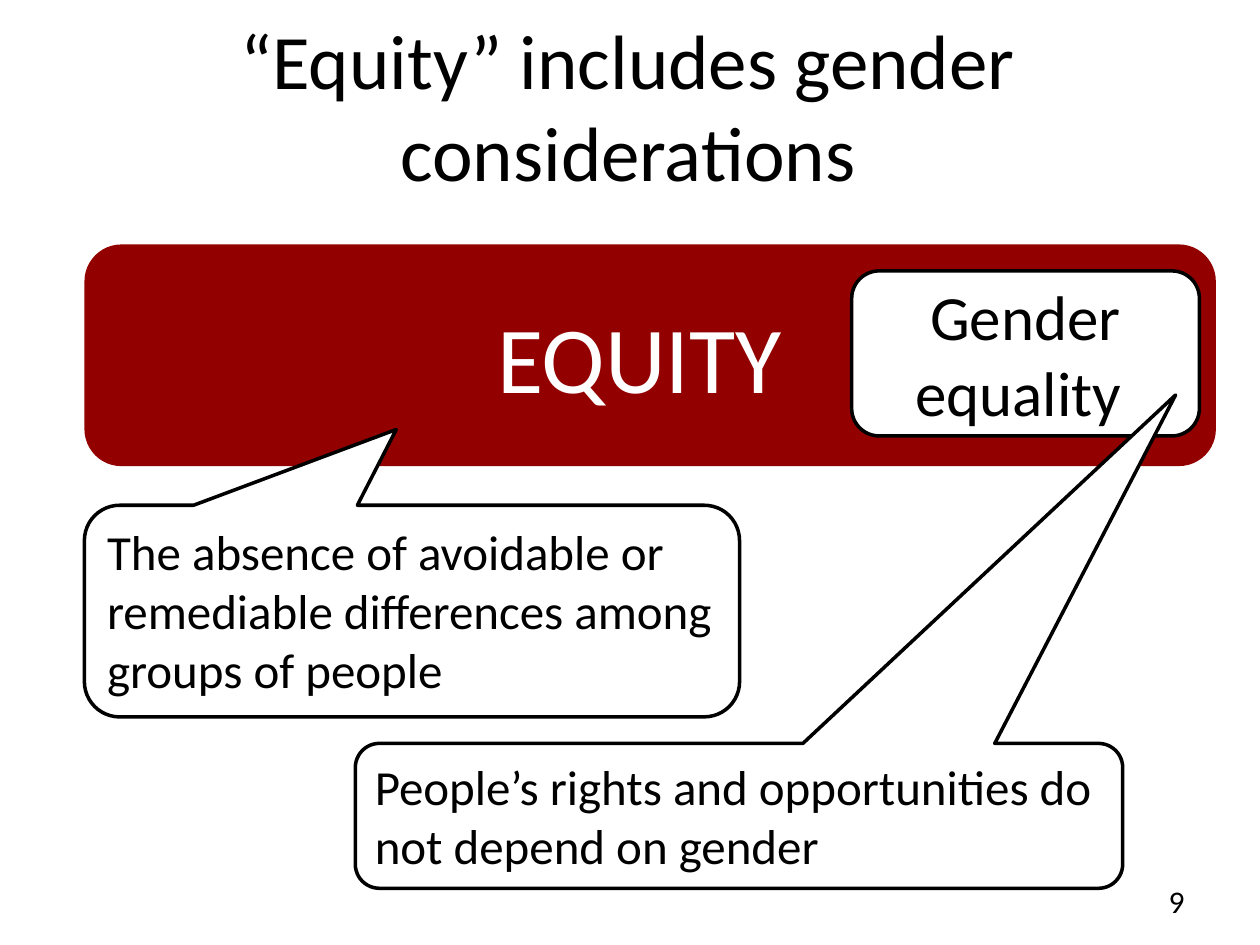
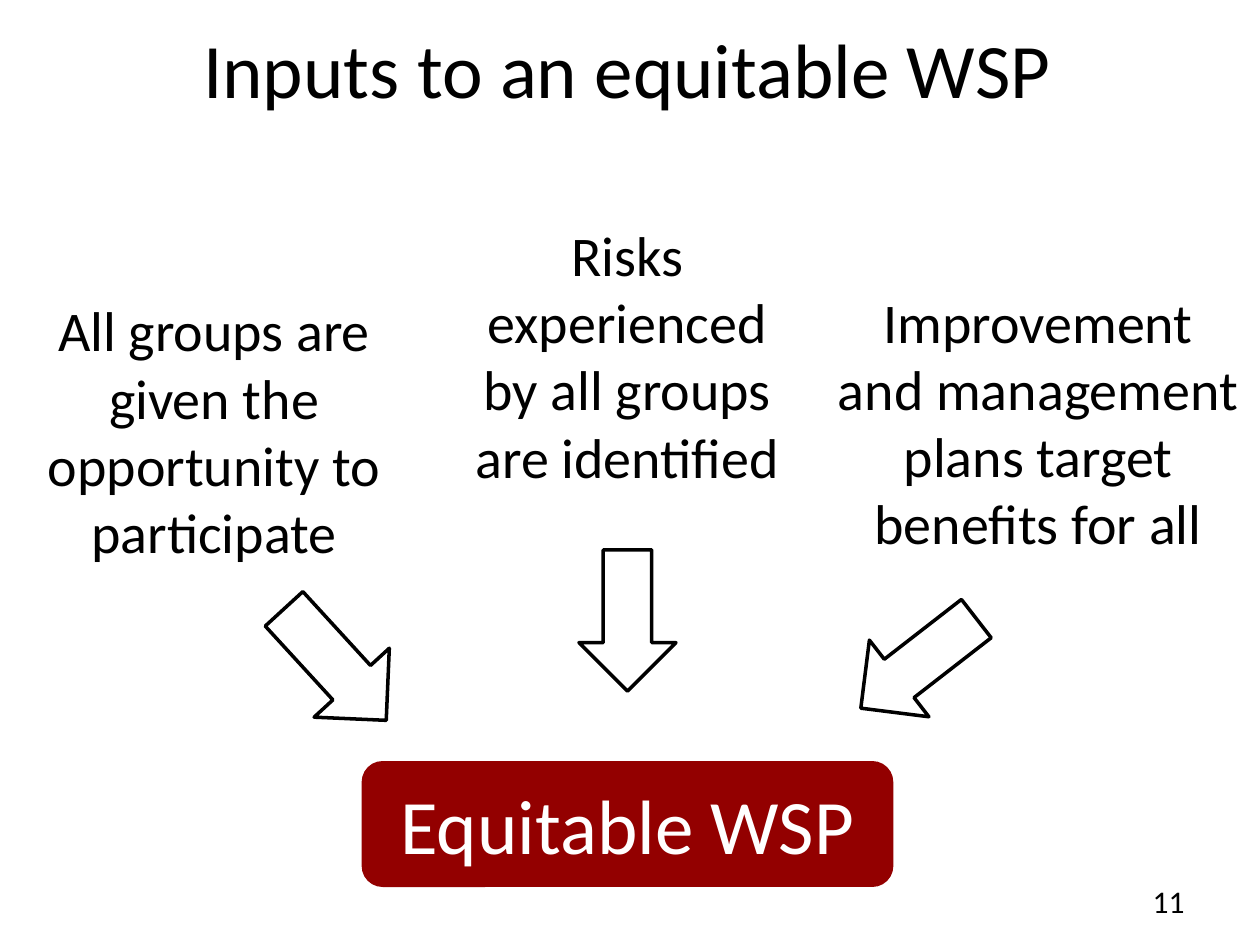
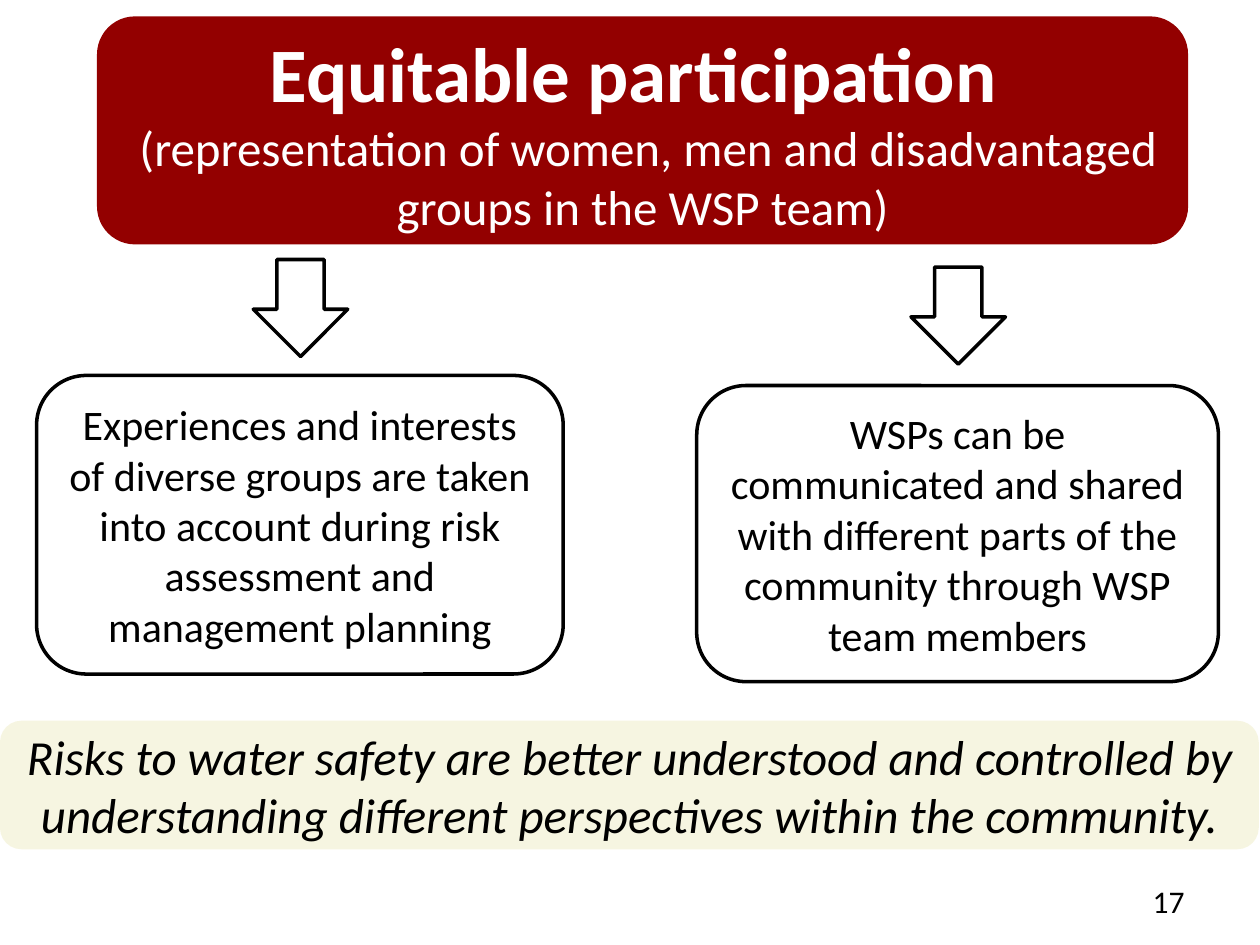
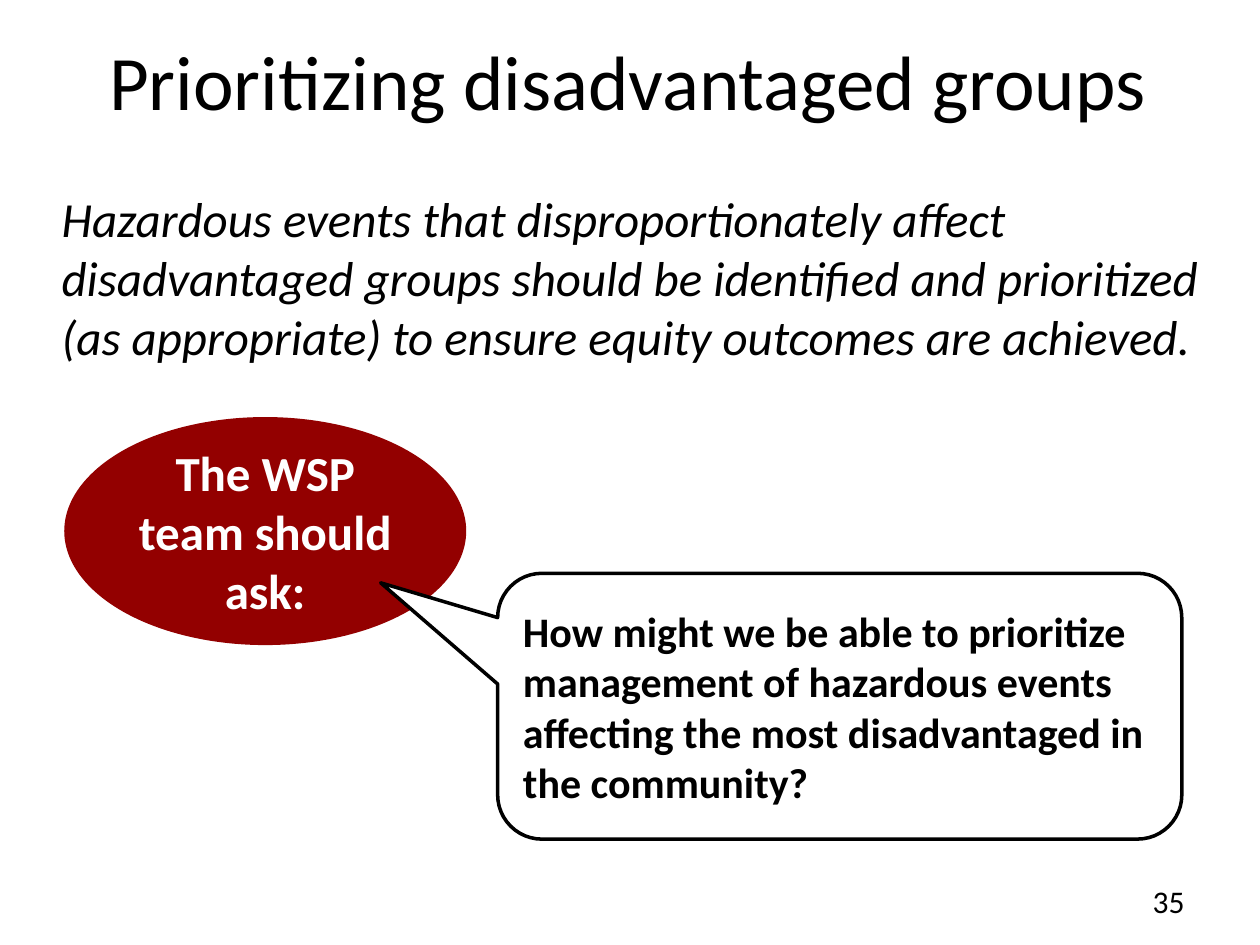
from lxml import etree
from pptx import Presentation
from pptx.dml.color import RGBColor
from pptx.enum.shapes import MSO_SHAPE as SHAPE
from pptx.enum.text import MSO_ANCHOR as ANCHOR, PP_ALIGN as ALIGN
from pptx.oxml.ns import qn
from pptx.util import Inches, Pt

COLORS = {"red": "930000", "black": "000000", "white": "FFFFFF", "cream": "EEECC2"}
FONT = "Calibri"


def rgb(name):
    return RGBColor.from_string(COLORS[name])


def write(tf, text, size=28, color="black", bold=False, italic=False,
          align=ALIGN.CENTER, anchor=ANCHOR.MIDDLE):
    """Put one paragraph per line of text after what the frame already holds."""
    tf.word_wrap = True
    tf.vertical_anchor = anchor
    for line in text.split("\n"):
        p = tf.add_paragraph() if tf.text else tf.paragraphs[0]
        p.alignment = align
        r = p.add_run()
        r.text = line
        r.font.name, r.font.size = FONT, Pt(size)
        r.font.bold, r.font.italic = bold, italic
        r.font.color.rgb = rgb(color)


class Deck:
    def __init__(self):
        self.prs = Presentation()
        self.prs.slide_width, self.prs.slide_height = Inches(10), Inches(7.5)
        self.s = None

    def new_slide(self, number):
        self.s = self.prs.slides.add_slide(self.prs.slide_layouts[6])
        self.text(str(number), 7.17, 6.95, 2.33, 0.4, size=18,
                  align=ALIGN.RIGHT, anchor=ANCHOR.MIDDLE)

    def text(self, text, x, y, w, h, anchor=ANCHOR.TOP, **fmt):
        sp = self.s.shapes.add_textbox(Inches(x), Inches(y), Inches(w), Inches(h))
        write(sp.text_frame, text, anchor=anchor, **fmt)

    def title(self, text, y, x=-0.02, w=10.01):
        self.text(text, x, y, w, 1.25, size=44)

    def shape(self, kind, x, y, w, h, fill=None, line=None):
        sp = self.s.shapes.add_shape(kind, Inches(x), Inches(y), Inches(w), Inches(h))
        sp.shadow.inherit = False
        if fill:
            sp.fill.solid()
            sp.fill.fore_color.rgb = rgb(fill)
        else:
            sp.fill.background()
        if line:
            sp.line.color.rgb = rgb(line)
            sp.line.width = Pt(2)
        else:
            sp.line.fill.background()
        return sp

    def solid(self, text, x, y, w, h, kind=SHAPE.ROUNDED_RECTANGLE, fill="red",
              color="white", **fmt):
        sp = self.shape(kind, x, y, w, h, fill)
        write(sp.text_frame, text, color=color, **fmt)
        return sp

    def outlined(self, text, x, y, w, h, fill=None, **fmt):
        sp = self.shape(SHAPE.ROUNDED_RECTANGLE, x, y, w, h, fill, "black")
        write(sp.text_frame, text, **fmt)

    def callout(self, text, x, y, w, h, tip, **fmt):
        """Speech bubble; tip is the pointer's offset from the centre, in widths and heights."""
        sp = self.shape(SHAPE.ROUNDED_RECTANGULAR_CALLOUT, x, y, w, h, "white", "black")
        sp.adjustments[0], sp.adjustments[1] = tip
        write(sp.text_frame, text, align=ALIGN.LEFT, **fmt)

    def arrow(self, x, y, w, h, angle=90):
        self.shape(SHAPE.RIGHT_ARROW, x, y, w, h, line="black").rotation = angle


def set_opacity(sp, percent):
    color = sp.fill._xPr.find(qn("a:solidFill"))[0]
    etree.SubElement(color, qn("a:alpha")).set("val", str(percent * 1000))


def equity_slide(deck):
    deck.new_slide(9)
    deck.solid("EQUITY ", 0.67, 1.94, 8.98, 1.76, size=54)
    deck.callout("The absence of avoidable or remediable differences among groups of people",
                 0.67, 4.01, 5.2, 1.68, (-0.024, -0.858), anchor=ANCHOR.TOP)
    deck.outlined("Gender equality ", 6.76, 2.15, 2.76, 1.31, fill="white", size=36)
    deck.callout("People’s rights and opportunities do not depend on gender",
                 2.82, 5.9, 6.09, 1.15, (0.569, -2.905), anchor=ANCHOR.TOP)
    deck.title("“Equity” includes gender considerations", 0.05)


def inputs_slide(deck):
    deck.new_slide(11)
    deck.title("Inputs to an equitable WSP", 0.12, x=-0.14, w=10.24)
    for text, x, y, w in [
        ("All groups are given the opportunity to participate", 0.02, 2.3, 3.36),
        ("Risks experienced by all groups are identified ", 3.66, 1.7, 2.64),
        ("Improvement\nand management plans target benefits for all", 6.5, 2.23, 3.48),
    ]:
        deck.text(text, x, y, w, 2.26, size=32)
    deck.arrow(2.06, 4.87, 1.2, 0.81, 47.5)
    deck.arrow(4.42, 4.54, 1.12, 0.77)
    deck.arrow(6.71, 4.88, 1.16, 0.77, 142.2)
    deck.solid("Equitable WSP", 2.87, 6.04, 4.22, 1, size=44)


def participation_slide(deck):
    deck.new_slide(17)
    banner = deck.solid("Equitable participation ", 0.77, 0.13, 8.66, 1.81, size=44, bold=True)
    write(banner.text_frame,
          " (representation of women, men and disadvantaged groups in the WSP team)",
          color="white")
    deck.outlined("Experiences and interests of diverse groups are taken into account "
                  "during risk assessment and management planning",
                  0.29, 2.98, 4.18, 2.37, size=24)
    deck.outlined("WSPs can be communicated and shared with different parts of the "
                  "community through WSP team members",
                  5.53, 3.06, 4.14, 2.35, size=24)
    deck.arrow(2, 2.07, 0.77, 0.75)
    deck.arrow(7.22, 2.13, 0.77, 0.75)
    conclusion = deck.solid("Risks to water safety are better understood and controlled by "
                            "understanding different perspectives within the community.",
                            0, 5.72, 9.99, 1.02, fill="cream", color="black", italic=True)
    set_opacity(conclusion, 49)


def priorities_slide(deck):
    deck.new_slide(35)
    deck.text("Hazardous events that disproportionately affect disadvantaged groups should be "
              "identified and prioritized (as appropriate) to ensure equity outcomes are "
              "achieved.", 0.39, 1.45, 9.49, 1.51, italic=True, align=ALIGN.LEFT)
    deck.title("Prioritizing disadvantaged groups", 0.22)
    deck.solid("The WSP team should ask:", 0.51, 3.31, 3.19, 1.81, kind=SHAPE.OVAL, bold=True)
    deck.callout("How might we be able to prioritize management of hazardous events affecting "
                 "the most disadvantaged in the community?",
                 3.95, 4.55, 5.43, 2.11, (-0.671, -0.464), size=24, bold=True)


def main():
    deck = Deck()
    for build in (equity_slide, inputs_slide, participation_slide, priorities_slide):
        build(deck)
    deck.prs.save("out.pptx")


if __name__ == "__main__":
    main()
